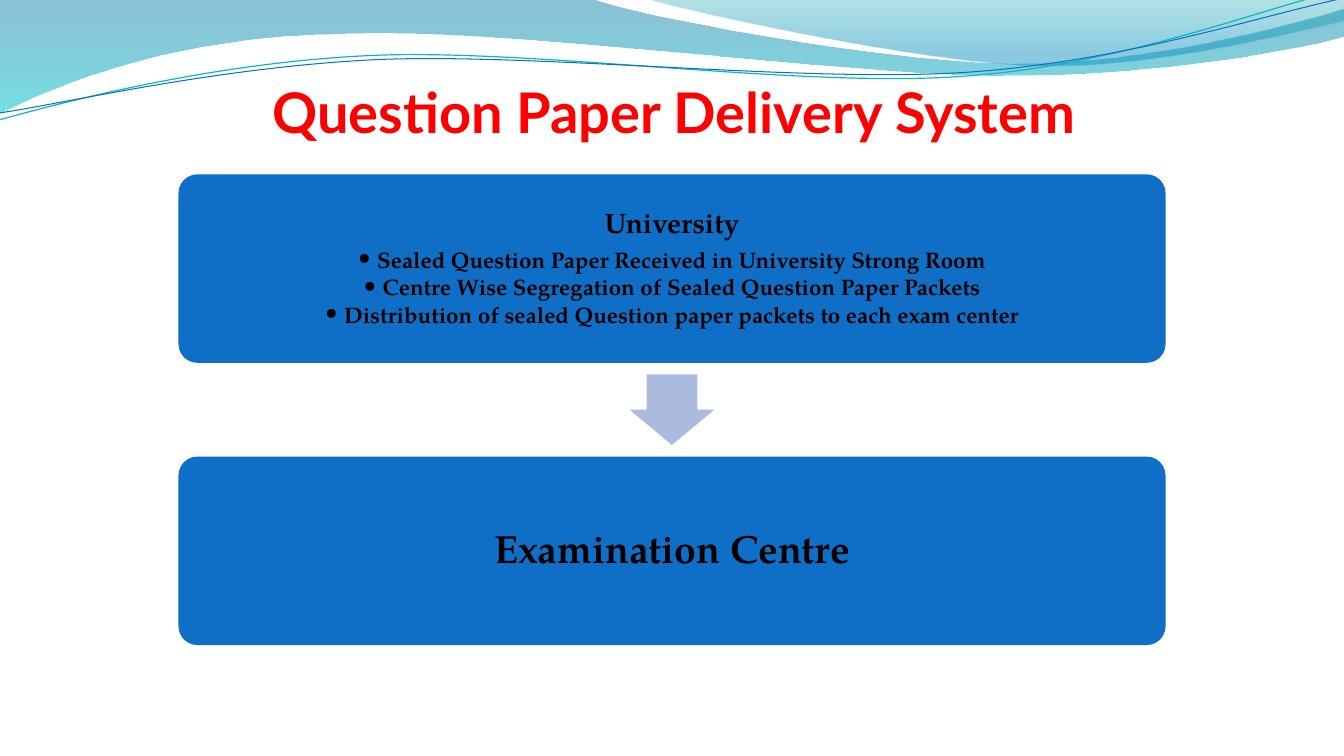
from lxml import etree
from pptx import Presentation
from pptx.dml.color import RGBColor
from pptx.enum import shapes, text
from pptx.oxml.ns import qn
from pptx.util import Inches, Pt

RED = RGBColor(0xFF, 0x00, 0x00)
BLACK = RGBColor(0x00, 0x00, 0x00)
BLUE = RGBColor(0x0F, 0x6F, 0xC6)
TEAL = RGBColor(0x0A, 0xB8, 0xBF)
PALE_BLUE = RGBColor(0xAB, 0xBB, 0xDF)
WAVE_BLUE = RGBColor(0x00, 0x74, 0xA1)
WAVE_CYAN = RGBColor(0x00, 0xC6, 0xCF)
CREST_TEAL = RGBColor(0x00, 0xA1, 0xA9)
CREST_BLUE = RGBColor(0x00, 0x8B, 0xBF)

TITLE_FONT = "Lato"
BODY_FONT = "TeX Gyre Pagella"

# Outlines in inches: a pair is a straight step, six numbers are a Bezier curve
BACK_WAVE = [
    (0, 0), (5.87, -0.01),
    (6.34, 0.17, 8.85, 0.63, 10.11, 0.63), (11.38, 0.63, 12.78, 0.26, 13.33, 0.09),
    (13.35, 0.36),
    (13.11, 0.44, 11.6, 0.76, 9.94, 0.75), (8.29, 0.75, 5.09, 0.28, 3.43, 0.34),
    (1.72, 0.36, 0.61, 0.83, -0.01, 1.13),
]
FRONT_WAVE = [
    (6.39, -0.01),
    (6.79, 0.11, 9.09, 0.62, 10.25, 0.65), (11.41, 0.69, 12.82, 0.32, 13.33, 0.21),
    (13.33, 0),
]
TEAL_LINE = [
    (-0.01, 1.19),
    (0.64, 1.01, 2.11, 0.62, 3.69, 0.55), (5.27, 0.48, 7.9, 0.87, 9.5, 0.76),
    (11.1, 0.66, 12.52, 0.08, 13.31, -0.1),
]
BLUE_LINE = [
    (0, 1.12),
    (0.63, 1.03, 2.18, 0.66, 3.78, 0.59), (5.37, 0.53, 7.96, 0.82, 9.55, 0.72),
    (11.15, 0.62, 12.55, 0.14, 13.34, -0.02),
]

UNIVERSITY_STEPS = [
    "Sealed Question Paper Received in University Strong Room",
    "Centre Wise Segregation of Sealed Question Paper Packets",
    "Distribution of sealed Question paper packets to each exam center",
]


def draw_outline(slide, outline, close):
    """Join the end points of the steps, then bend the curved steps."""
    start, *ends = [(Inches(step[-2]), Inches(step[-1])) for step in outline]
    builder = slide.shapes.build_freeform(*start)
    builder.add_line_segments(ends, close=close)
    drawn = builder.convert_to_shape()
    drawn.shadow.inherit = False
    segments = list(drawn._element.spPr.iter(qn("a:lnTo")))
    for segment, step in zip(segments, outline[1:]):
        if len(step) == 6:
            segment.tag = qn("a:cubicBezTo")
            for i in (0, 2):
                control = etree.Element(qn("a:pt"))
                control.set("x", str(Inches(step[i]) - drawn.left))
                control.set("y", str(Inches(step[i + 1]) - drawn.top))
                segment.insert(i // 2, control)
    return drawn


def add_wave(slide, outline, stops):
    """Fill an outline from top to bottom; stops are (position, colour, opacity %)."""
    wave = draw_outline(slide, outline, close=True)
    wave.line.fill.background()
    wave.fill.gradient()
    wave.fill.gradient_angle = 270
    for stop, (position, colour, _) in zip(wave.fill.gradient_stops, stops):
        stop.position = position
        stop.color.rgb = colour
    colours = list(wave._element.spPr.iter(qn("a:srgbClr")))
    for colour_element, (_, _, opacity) in zip(colours, stops):
        etree.SubElement(colour_element, qn("a:alpha")).set("val", str(opacity * 1000))


def add_wave_line(slide, outline, colour, width):
    wave_line = draw_outline(slide, outline, close=False)
    wave_line.fill.background()
    wave_line.line.color.rgb = colour
    wave_line.line.width = Pt(width)


def add_header_waves(slide):
    add_wave(slide, BACK_WAVE, [(0, WAVE_BLUE, 45), (1, WAVE_CYAN, 55)])
    add_wave(slide, FRONT_WAVE, [(0, CREST_TEAL, 30), (0.8, CREST_BLUE, 45)])
    add_wave_line(slide, TEAL_LINE, TEAL, 0.85)
    add_wave_line(slide, BLUE_LINE, BLUE, 0.75)


def style_runs(paragraph, font_name, size, colour):
    paragraph.alignment = text.PP_ALIGN.CENTER
    for run in paragraph.runs:
        run.font.name = font_name
        run.font.size = Pt(size)
        run.font.bold = True
        run.font.color.rgb = colour


def set_frame(frame, anchor, sides, top, bottom):
    frame.word_wrap = True
    frame.auto_size = text.MSO_AUTO_SIZE.NONE
    frame.vertical_anchor = anchor
    frame.margin_left = frame.margin_right = Inches(sides)
    frame.margin_top, frame.margin_bottom = Inches(top), Inches(bottom)


def fill_title(slide, left, top, width, height):
    title = slide.shapes.title
    title.left, title.top = Inches(left), Inches(top)
    title.width, title.height = Inches(width), Inches(height)
    title.text_frame.text = "Question Paper Delivery System"
    set_frame(title.text_frame, text.MSO_ANCHOR.BOTTOM, 0, 0.05, 0)
    style_runs(title.text_frame.paragraphs[0], TITLE_FONT, 40, RED)


def add_block(slide, preset, colour, left, top, width, height, adjustments):
    block = slide.shapes.add_shape(preset, Inches(left), Inches(top),
                                   Inches(width), Inches(height))
    block.shadow.inherit = False
    block.fill.solid()
    block.fill.fore_color.rgb = colour
    block.line.fill.background()
    for i, value in enumerate(adjustments):
        block.adjustments[i] = value
    return block


def add_bullet(paragraph):
    paragraph.level = 1
    properties = paragraph._p.get_or_add_pPr()
    properties.set("marL", str(Inches(0.19)))
    properties.set("indent", str(-Inches(0.19)))
    etree.SubElement(properties, qn("a:buFont")).set("typeface", BODY_FONT)
    etree.SubElement(properties, qn("a:buChar")).set("char", "•")


def add_stage(slide, left, top, width, height, heading, size, inset, steps=()):
    """A rounded box with a heading and optional bulleted steps."""
    stage = add_block(slide, shapes.MSO_SHAPE.ROUNDED_RECTANGLE, BLUE,
                      left, top, width, height, [0.1])
    frame = stage.text_frame
    frame.text = "\n".join([heading, *steps])
    set_frame(frame, text.MSO_ANCHOR.MIDDLE, inset, inset, inset)
    for i, paragraph in enumerate(frame.paragraphs):
        if i > 0:
            add_bullet(paragraph)
        style_runs(paragraph, BODY_FONT, 16 if i else size, BLACK)
        paragraph.line_spacing = 0.9
        paragraph.space_after = Pt(2.4 if i else 0.35 * size)


def add_delivery_flow(slide, left, top, width, height):
    """Two stages stacked in the box, with an arrow centred in the gap."""
    stage_height, arrow_width, arrow_height = 1.87, 0.84, 0.7
    gap = height - 2 * stage_height
    add_stage(slide, left, top, width, stage_height,
              "University", 20, 0.08, UNIVERSITY_STEPS)
    add_block(slide, shapes.MSO_SHAPE.DOWN_ARROW, PALE_BLUE,
              left + (width - arrow_width) / 2,
              top + stage_height + (gap - arrow_height) / 2,
              arrow_width, arrow_height, [0.6, 0.5])
    add_stage(slide, left, top + stage_height + gap, width, stage_height,
              "Examination Centre", 28, 0.12)


def main():
    deck = Presentation()
    deck.slide_width, deck.slide_height = Inches(13.33), Inches(7.5)
    slide = deck.slides.add_slide(deck.slide_layouts[5])
    add_header_waves(slide)
    fill_title(slide, 0.63, 0.21, 12.11, 1.23)
    add_delivery_flow(slide, 1.77, 1.73, 9.79, 4.67)
    deck.save("out.pptx")


if __name__ == "__main__":
    main()
